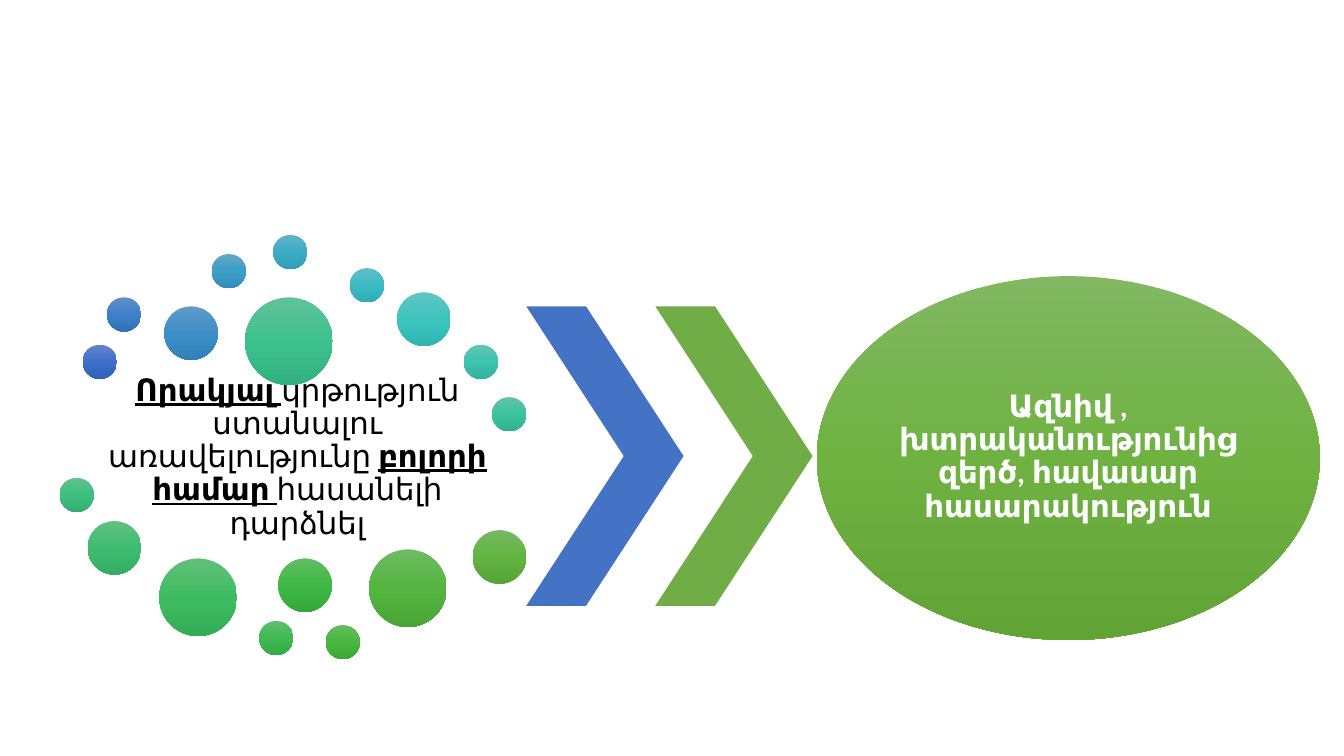
"""Builds a slide that leads from accessible education to a fair society."""
from copy import deepcopy
from dataclasses import dataclass
from typing import NamedTuple

from pptx import Presentation
from pptx.dml.color import RGBColor
from pptx.enum.shapes import MSO_SHAPE
from pptx.enum.text import MSO_ANCHOR, PP_ALIGN
from pptx.util import Inches, Pt

ELLIPSE, CHEVRON = MSO_SHAPE.OVAL, MSO_SHAPE.CHEVRON
MIDDLE, CENTER = MSO_ANCHOR.MIDDLE, PP_ALIGN.CENTER
SLIDE_WIDTH, SLIDE_HEIGHT = Inches(13.33), Inches(7.5)
TOP_TO_BOTTOM = 270
CHEVRON_STEP = 9.6
CHEVRON_DEPTH = 0.62
SMALL, MEDIUM, LARGE, LARGEST = 2.55, 3.98, 5.78, 6.53


@dataclass(frozen=True)
class Theme:
    """Fonts, sizes and colours of the slide."""
    font: str = "Calibri"
    body_size: int = 22
    dark_text: str = "000000"
    light_text: str = "FFFFFF"
    chevrons: tuple[str, ...] = ("4472C4", "70AD47")
    society: str = "81B861 6FB242 62A336"


class Area(NamedTuple):
    """A place in percent of the slide's width and height."""
    left: float
    top: float
    width: float
    height: float


class Bubble(NamedTuple):
    """A circle: left and top in percent, diameter in percent of the width, gradient."""
    left: float
    top: float
    diameter: float
    gradient: str


class Phrase(NamedTuple):
    """A piece of text, stressed by bold and underline or plain."""
    text: str
    bold: bool = False
    underline: bool = False


THEME = Theme()
GOAL_AREA = Area(6.23, 51.2, 31.81, 18.67)
FIRST_CHEVRON = Area(39.16, 40.53, 11.7, 39.6)
SOCIETY_AREA = Area(60.77, 36.53, 37.43, 48.13)
SOCIETY_TEXT_AREA = Area(66.24, 43.47, 26.48, 34)

GOAL = [
    Phrase("Որակյալ ", bold=True, underline=True),
    Phrase("կրթություն ստանալու առավելությունը "),
    Phrase("բոլորի համար ", bold=True, underline=True),
    Phrase("հասանելի դարձնել"),
]
SOCIETY = [Phrase("Ազնիվ , խտրականությունից զերծ, հավասար հասարակություն", bold=True)]

BUBBLES = [
    Bubble(6.15, 45.6, SMALL, "6183CB 3E70CA 3062BB"),
    Bubble(7.95, 39.33, SMALL, "618ECA 3D80C9 3071BA"),
    Bubble(12.23, 40.53, MEDIUM, "619AC9 3D8FC8 3080B9"),
    Bubble(15.75, 33.6, SMALL, "61A6C8 3D9EC7 308FB8"),
    Bubble(20.33, 31.07, SMALL, "61B2C7 3DADC6 309EB7"),
    Bubble(26.03, 35.47, SMALL, "61BEC7 3DBBC5 30ACB6"),
    Bubble(29.56, 38.67, MEDIUM, "60C6C1 3DC4BF 30B5B0"),
    Bubble(34.51, 45.6, SMALL, "60C5B4 3DC3AF 30B39F"),
    Bubble(36.61, 52.53, SMALL, "60C4A6 3DC29F 31B28F"),
    Bubble(18.23, 39.33, LARGEST, "60C39A 3DC18F 31B080"),
    Bubble(4.43, 63.2, SMALL, "60C28E 3EBF7F 32AF71"),
    Bubble(6.53, 68.93, MEDIUM, "60C182 3EBD70 32AD63"),
    Bubble(11.85, 73.87, LARGE, "60C077 3FBC62 33AC55"),
    Bubble(19.28, 82.13, SMALL, "60BF6D 3FBA54 33AA47"),
    Bubble(20.71, 73.87, MEDIUM, "60BD64 40B846 34A93A"),
    Bubble(24.23, 82.67, SMALL, "65BC61 48B740 3CA735"),
    Bubble(27.46, 72.67, LARGE, "6EBB61 55B541 49A635"),
    Bubble(35.18, 70.13, MEDIUM, "77B961 62B441 55A436"),
]


def place(area: Area) -> tuple[int, int, int, int]:
    """Turn an area in percent into slide lengths."""
    return (round(SLIDE_WIDTH * area.left / 100), round(SLIDE_HEIGHT * area.top / 100),
            round(SLIDE_WIDTH * area.width / 100), round(SLIDE_HEIGHT * area.height / 100))


def fill_gradient(shape, colours: list[str]) -> None:
    """Fill a shape from top to bottom with evenly spaced colours."""
    shape.fill.gradient()
    shape.fill.gradient_angle = TOP_TO_BOTTOM
    stop_list = shape.fill._fill._gradFill.gsLst
    for _ in colours[2:]:
        stop_list.append(deepcopy(stop_list[0]))
    for index, (stop, colour) in enumerate(zip(shape.fill.gradient_stops, colours)):
        stop.position = index / (len(colours) - 1)
        stop.color.rgb = RGBColor.from_string(colour)


def add_figure(slide, kind: MSO_SHAPE, area: Area, colours: str):
    """Add a borderless shape filled with one colour or a gradient of several."""
    shape = slide.shapes.add_shape(kind, *place(area))
    shape.shadow.inherit = False
    shape.line.fill.background()
    palette = colours.split()
    if len(palette) > 1:
        fill_gradient(shape, palette)
    else:
        shape.fill.solid()
        shape.fill.fore_color.rgb = RGBColor.from_string(palette[0])
    return shape


def add_text(slide, area: Area, phrases: list[Phrase], *, colour: str, inset: float = 0) -> None:
    """Add a centred paragraph made of phrases."""
    frame = slide.shapes.add_textbox(*place(area)).text_frame
    frame.word_wrap = True
    frame.vertical_anchor = MIDDLE
    frame.margin_left = frame.margin_right = Inches(inset)
    frame.margin_top = frame.margin_bottom = Inches(inset)
    paragraph = frame.paragraphs[0]
    paragraph.alignment = CENTER
    paragraph.line_spacing = 0.9
    for phrase in phrases:
        run = paragraph.add_run()
        run.text = phrase.text
        run.font.name = THEME.font
        run.font.size = Pt(THEME.body_size)
        run.font.bold = phrase.bold
        run.font.underline = phrase.underline
        run.font.color.rgb = RGBColor.from_string(colour)


def main() -> None:
    """Build and save the slide."""
    presentation = Presentation()
    presentation.slide_width, presentation.slide_height = SLIDE_WIDTH, SLIDE_HEIGHT
    slide = presentation.slides.add_slide(presentation.slide_layouts.get_by_name("Blank"))

    add_text(slide, GOAL_AREA, GOAL, colour=THEME.dark_text, inset=0.03)
    for bubble in BUBBLES:
        height = bubble.diameter * SLIDE_WIDTH / SLIDE_HEIGHT
        area = Area(bubble.left, bubble.top, bubble.diameter, height)
        add_figure(slide, ELLIPSE, area, bubble.gradient)
    for index, colour in enumerate(THEME.chevrons):
        area = FIRST_CHEVRON._replace(left=FIRST_CHEVRON.left + index * CHEVRON_STEP)
        add_figure(slide, CHEVRON, area, colour).adjustments[0] = CHEVRON_DEPTH
    add_figure(slide, ELLIPSE, SOCIETY_AREA, THEME.society)
    add_text(slide, SOCIETY_TEXT_AREA, SOCIETY, colour=THEME.light_text)

    presentation.save("out.pptx")


if __name__ == "__main__":
    main()
